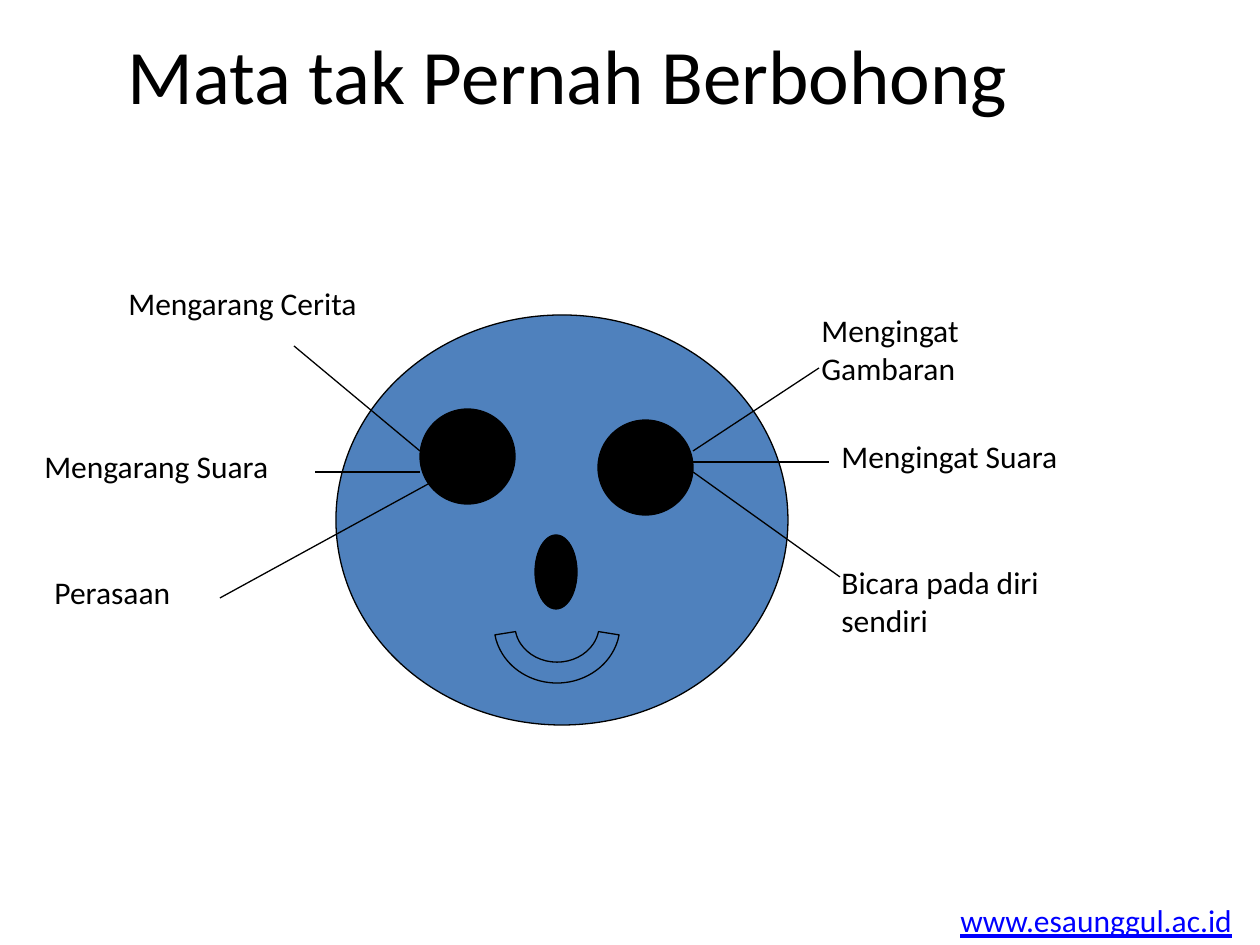
from lxml.etree import SubElement
from pptx import Presentation
from pptx.dml.color import RGBColor
from pptx.enum.shapes import MSO_CONNECTOR, MSO_SHAPE
from pptx.enum.text import MSO_ANCHOR, PP_ALIGN
from pptx.oxml.ns import qn
from pptx.util import Emu, Pt

BLACK, BLUE, LINK = "000000", "4F81BD", "0000FF"


def px(*lengths):
    return [Emu(round(length * 914400 / 126)) for length in lengths]


def style_text(shape, text, size, color):
    shape.text_frame.text = text
    paragraph = shape.text_frame.paragraphs[0]
    paragraph.font.name = "Calibri"
    paragraph.font.size = Pt(size)
    paragraph.font.color.rgb = RGBColor.from_string(color)
    return paragraph


presentation = Presentation()
presentation.slide_width, presentation.slide_height = px(1260, 945)
slide = presentation.slides.add_slide(presentation.slide_layouts[5])

title = slide.shapes.title
title.left, title.top, title.width, title.height = px(95, 21, 946, 221)
title.text_frame.vertical_anchor = MSO_ANCHOR.TOP
style_text(title, "Mata tak Pernah Berbohong", 44, BLACK).alignment = PP_ALIGN.CENTER

face_parts = [
    (MSO_SHAPE.OVAL, 336, 315, 452, 410, BLUE),
    (MSO_SHAPE.OVAL, 420, 409, 95, 95, BLACK),
    (MSO_SHAPE.OVAL, 598, 420, 95, 95, BLACK),
    (MSO_SHAPE.BLOCK_ARC, 494, 567, 126, 116, BLUE),
    (MSO_SHAPE.OVAL, 535, 535, 42, 74, BLACK),
]
for kind, left, top, width, height, color in face_parts:
    shape = slide.shapes.add_shape(kind, *px(left, top, width, height))
    shape.shadow.inherit = False
    shape.fill.solid()
    shape.fill.fore_color.rgb = RGBColor.from_string(color)
    shape.line.color.rgb = RGBColor.from_string(BLACK)
    shape.line.width = Pt(0.75)
    if kind == MSO_SHAPE.BLOCK_ARC:
        shape.rotation = 180
        start_angle, end_angle = 189, 351
        shape.adjustments[0] = start_angle * 0.6
        shape.adjustments[1] = end_angle * 0.6
        shape.adjustments[2] = 0.18

labels = [
    ("Mengarang Cerita", 116, 278, 273, 88),
    ("Mengarang Suara", 32, 441, 305, 50),
    ("Perasaan", 42, 567, 273, 50),
    ("Mengingat Gambaran", 809, 305, 273, 88),
    ("Mengingat Suara", 829, 431, 277, 50),
    ("Bicara pada diri sendiri", 829, 557, 273, 88),
]
for text, *box in labels:
    label = slide.shapes.add_textbox(*px(*box))
    label.text_frame.word_wrap = True
    style_text(label, text, 18, BLACK)

pointers = [
    (693, 451, 819, 368),
    (693, 462, 829, 462),
    (693, 472, 840, 577),
    (420, 451, 294, 346),
    (420, 472, 315, 472),
    (430, 483, 220, 598),
]
for ends in pointers:
    pointer = slide.shapes.add_connector(MSO_CONNECTOR.STRAIGHT, *px(*ends))
    pointer.line.color.rgb = RGBColor.from_string(BLACK)
    pointer.line.width = Pt(0.75)
    SubElement(pointer._element.spPr, qn("a:effectLst"))

website = slide.shapes.add_textbox(*px(948, 895, 300, 50))
website.text_frame.word_wrap = False
style_text(website, "www.esaunggul.ac.id", 18, LINK).font.underline = True

presentation.save("out.pptx")
